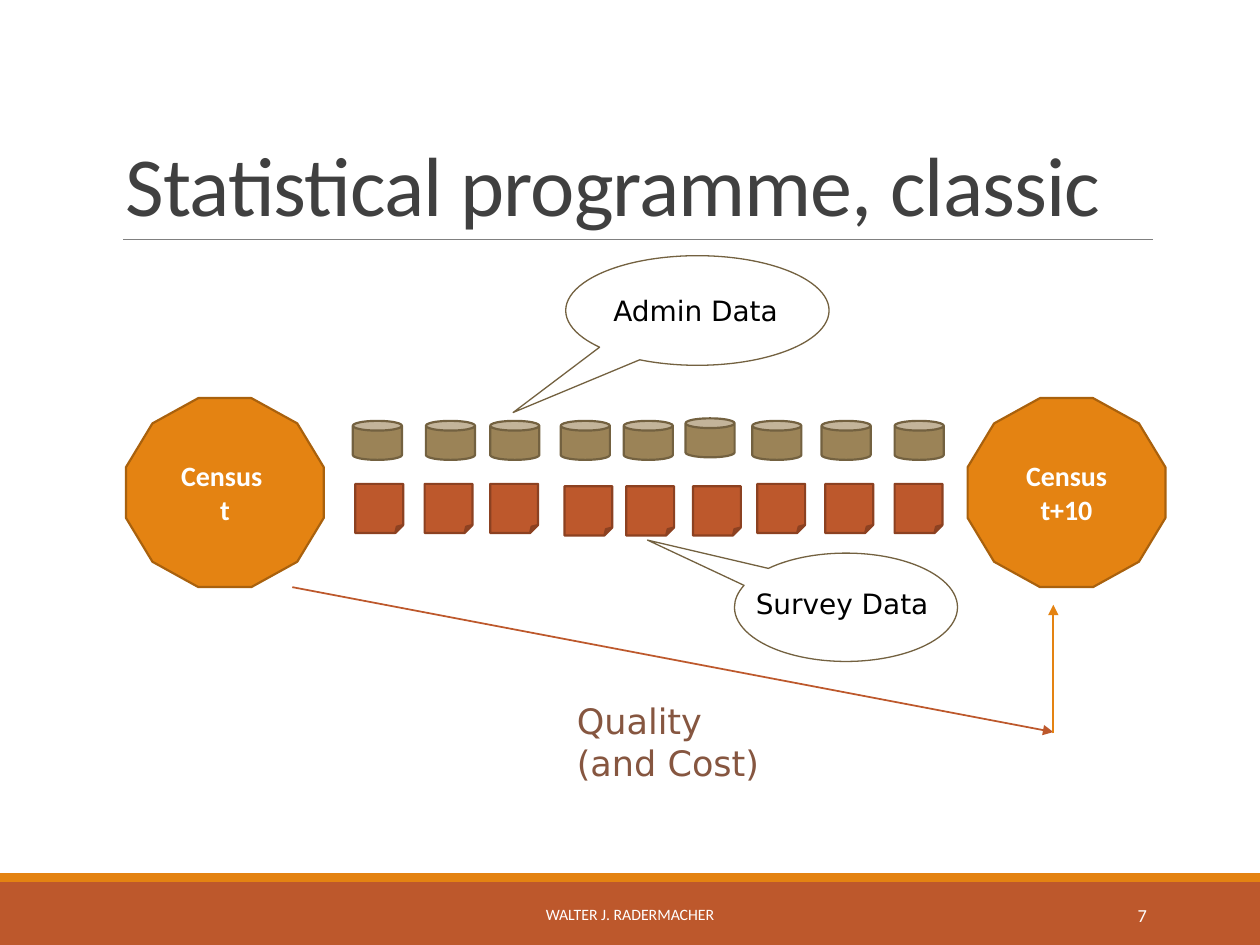
from dataclasses import dataclass
from lxml import etree
from pptx import Presentation
from pptx.dml.color import RGBColor
from pptx.enum.shapes import MSO_CONNECTOR, MSO_SHAPE as SHAPE
from pptx.enum.text import MSO_ANCHOR as ANCHOR, MSO_AUTO_SIZE, PP_ALIGN as ALIGN
from pptx.oxml.ns import qn
from pptx.util import Inches, Pt


@dataclass(frozen=True)
class Theme:
    orange: str = "E48312"
    orange_edge: str = "A9610D"
    rust: str = "BD582C"
    rust_edge: str = "8C4121"
    tan: str = "9B8357"
    tan_edge: str = "736140"
    brown: str = "865640"
    grey: str = "808080"
    dark: str = "404040"
    black: str = "000000"
    white: str = "FFFFFF"
    head_font: str = "Calibri"
    body_font: str = "DejaVu Sans"
    title: float = 48
    quality: float = 20
    label: float = 16
    number: float = 10.5
    footer: float = 9


T = Theme()


def rgb(value):
    return RGBColor.from_string(value)


def write(tf, text, size, color, font=T.body_font, bold=False, align=ALIGN.LEFT,
          anchor=ANCHOR.TOP, line_spacing=None, tracking=None):
    tf.word_wrap = True
    tf.vertical_anchor = anchor
    for i, line in enumerate(text.split("\n")):
        p = tf.paragraphs[0] if i == 0 else tf.add_paragraph()
        p.text = line
        p.alignment = align
        if line_spacing:
            p.line_spacing = line_spacing
        for r in p.runs:
            r.font.name = font
            r.font.size = Pt(size)
            r.font.bold = bold
            r.font.color.rgb = rgb(color)
            if tracking is not None:
                r._r.get_or_add_rPr().set("spc", str(int(tracking * 100)))


class SlideBuilder:
    def __init__(self, slide, theme):
        self.s = slide
        self.theme = theme

    def shape(self, kind, box, fill=None, edge=None, width=1.25, adjust=()):
        sp = self.s.shapes.add_shape(kind, *map(Inches, box))
        sp.shadow.inherit = False
        if fill:
            sp.fill.solid()
            sp.fill.fore_color.rgb = rgb(fill)
        else:
            sp.fill.background()
        if edge:
            sp.line.color.rgb = rgb(edge)
            sp.line.width = Pt(width)
        else:
            sp.line.fill.background()
        for i, value in enumerate(adjust):
            sp.adjustments[i] = value
        return sp

    def text(self, box, text, size, color, grow=False, **fmt):
        tf = self.s.shapes.add_textbox(*map(Inches, box)).text_frame
        write(tf, text, size, color, **fmt)
        if grow:
            tf.auto_size = MSO_AUTO_SIZE.SHAPE_TO_FIT_TEXT

    def line(self, start, end, color, width=1, arrow=True):
        cx = self.s.shapes.add_connector(
            MSO_CONNECTOR.STRAIGHT, *map(Inches, (*start, *end)))
        cx.line.color.rgb = rgb(color)
        cx.line.width = Pt(width)
        if arrow:
            etree.SubElement(cx.line._get_or_add_ln(), qn("a:tailEnd"), type="triangle")
        etree.SubElement(cx._element.spPr, qn("a:effectLst"))

    def census(self, left, text):
        t = self.theme
        sp = self.shape(SHAPE.DODECAGON, (left, 3.16, 1.57, 1.5), t.orange, t.orange_edge)
        write(sp.text_frame, text, t.label, t.white, font=t.head_font, bold=True,
              align=ALIGN.CENTER, anchor=ANCHOR.MIDDLE)

    def row(self, kind, places, size, fill, edge):
        for left, top in places:
            self.shape(kind, (left, top, *size), fill, edge)

    def callout(self, box, adjust, label_box, label):
        t = self.theme
        self.shape(SHAPE.OVAL_CALLOUT, box, edge=t.tan_edge, width=0.75, adjust=adjust)
        self.text(label_box, label, t.label, t.black, grow=True)


def main():
    prs = Presentation()
    prs.slide_width, prs.slide_height = Inches(10), Inches(7.5)
    b = SlideBuilder(prs.slides.add_slide(prs.slide_layouts[6]), T)

    b.shape(SHAPE.RECTANGLE, (0, 7, 10, 0.5), T.rust)
    b.shape(SHAPE.RECTANGLE, (0, 6.93, 10, 0.07), T.orange)
    b.line((0.98, 1.9), (9.15, 1.9), T.grey, 0.5, arrow=False)
    b.text((0.9, 0.31, 8.25, 1.59), "Statistical programme, classic", T.title, T.dark,
           font=T.head_font, anchor=ANCHOR.BOTTOM, line_spacing=0.85, tracking=-0.5)
    b.text((3.02, 7.06, 3.96, 0.4), "WALTER J. RADERMACHER", T.footer, T.white,
           font=T.head_font, align=ALIGN.CENTER, anchor=ANCHOR.MIDDLE)
    b.text((8.12, 7.06, 1.08, 0.4), "7", T.number, T.white,
           font=T.head_font, align=ALIGN.RIGHT, anchor=ANCHOR.MIDDLE)

    b.census(1, "Census \vt")
    b.census(7.68, "Census t+10")

    admin_lefts = (2.8, 3.38, 3.89, 4.45, 4.95, 5.44, 5.97, 6.52, 7.1)
    survey_lefts = (2.82, 3.37, 3.89, 4.48, 4.97, 5.5, 6.01, 6.55, 7.1)
    admin = [(x, 3.32 if i == 5 else 3.34) for i, x in enumerate(admin_lefts)]
    survey = [(x, 3.86 if i in (3, 4, 5) else 3.84) for i, x in enumerate(survey_lefts)]
    b.row(SHAPE.CAN, admin, (0.39, 0.31), T.tan, T.tan_edge)
    b.row(SHAPE.FOLDED_CORNER, survey, (0.38, 0.39), T.rust, T.rust_edge)

    b.line((2.32, 4.66), (8.36, 5.81), T.rust)
    b.line((8.36, 5.82), (8.36, 4.8), T.orange)
    b.text((4.48, 5.5, 2.43, 0.77), "Quality\n(and Cost)", T.quality, T.brown, grow=True)

    b.callout((4.49, 2.03, 2.09, 0.87), (-0.7, 0.93), (4.77, 2.28, 1.8, 0.37), "Admin Data")
    b.callout((5.83, 4.39, 1.77, 0.86), (-0.89, -0.62), (5.9, 4.61, 1.7, 0.37), "Survey Data")

    prs.save("out.pptx")


if __name__ == "__main__":
    main()
